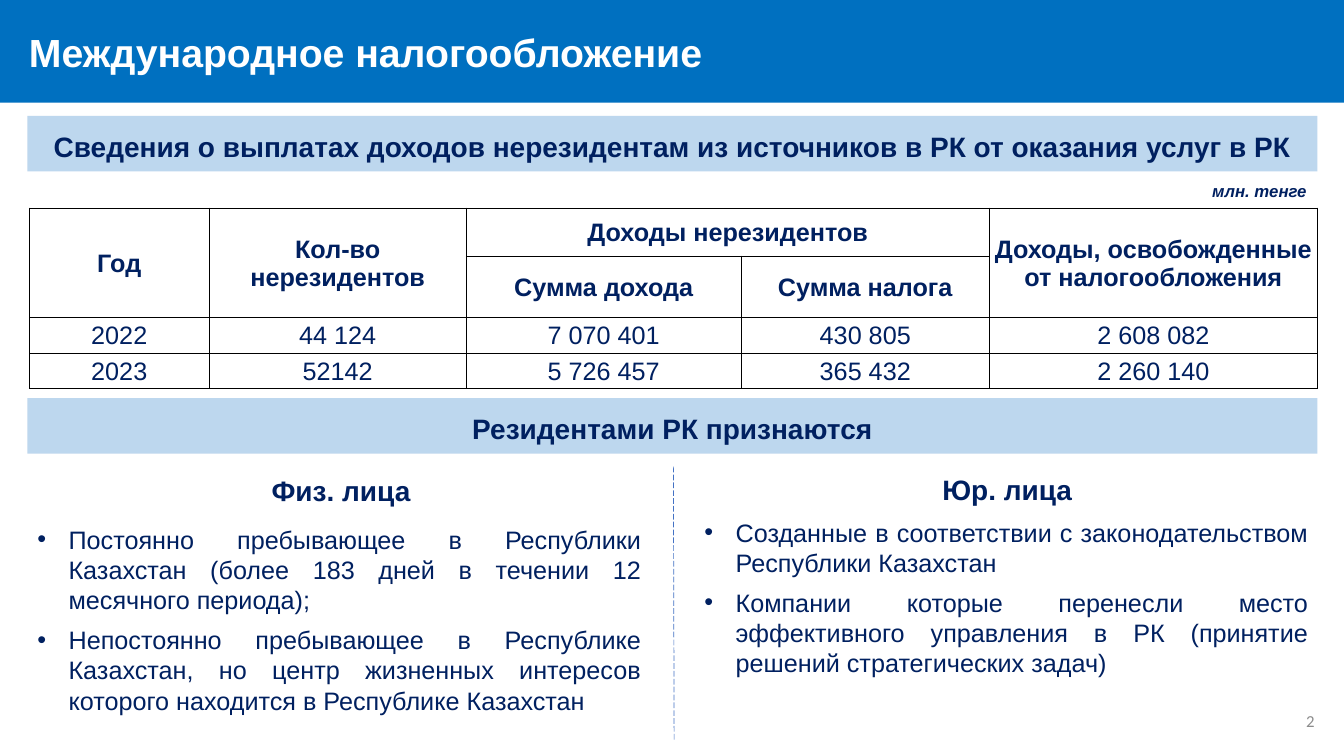
import pptx
import pptx.dml.color
import pptx.enum.dml
import pptx.enum.shapes
import pptx.enum.text
import pptx.oxml
import pptx.oxml.ns
import pptx.util

Cm = pptx.util.Cm
Pt = pptx.util.Pt
RGBColor = pptx.dml.color.RGBColor
Align = pptx.enum.text.PP_ALIGN
Anchor = pptx.enum.text.MSO_ANCHOR

WHITE = RGBColor(0xFF, 0xFF, 0xFF)
NAVY = RGBColor(0x00, 0x20, 0x60)
BLUE = RGBColor(0x00, 0x70, 0xC0)
PALE_BLUE = RGBColor(0xBD, 0xD7, 0xEE)
DIVIDER_BLUE = RGBColor(0x44, 0x72, 0xC4)
GREY = RGBColor(0x8C, 0x8C, 0x8C)

TITLE = "Международное налогообложение"
UNIT = "млн. тенге"
PAGE_NUMBER = "2"
BANDS = [
    ("Сведения о выплатах доходов нерезидентам из источников в РК от оказания услуг в РК", 2.92),
    ("Резидентами РК признаются", 10.03),
]
TABLE_ROWS = [
    ["Год", "Кол-во нерезидентов", "Доходы нерезидентов", "", "Доходы, освобожденные от налогообложения"],
    ["", "", "Сумма дохода", "Сумма налога", ""],
    ["2022", "44 124", "7 070 401", "430 805", "2 608 082"],
    ["2023", "52142", "5 726 457", "365 432", "2 260 140"],
]
HEADER_ROWS = 2
MERGES = [((0, 0), (1, 0)), ((0, 1), (1, 1)), ((0, 2), (0, 3)), ((0, 4), (1, 4))]
COLUMN_WIDTHS = [4.53, 6.48, 6.93, 6.25, 8.27]
ROW_HEIGHTS = [1.21, 1.54, 0.89, 0.9]
RESIDENTS = [
    {
        "heading": "Физ. лица",
        "heading_at": (0.76, 11.68, 15.67, 1.2),
        "points_at": (0.69, 13.08, 15.72, 5.13),
        "points": [
            "Постоянно пребывающее в Республики Казахстан (более 183 дней в течении 12 месячного периода);",
            "Непостоянно пребывающее в Республике Казахстан, но центр жизненных интересов которого находится в Республике Казахстан",
        ],
    },
    {
        "heading": "Юр. лица",
        "heading_at": (17.55, 11.66, 15.67, 1.2),
        "points_at": (17.5, 12.9, 15.72, 4.62),
        "points": [
            "Созданные в соответствии с законодательством Республики Казахстан",
            "Компании которые перенесли место эффективного управления в РК (принятие решений стратегических задач)",
        ],
    },
]


def add_child(parent, xml):
    tag, rest = xml.split(" ", 1)
    child = pptx.oxml.parse_xml(f"<a:{tag} {pptx.oxml.ns.nsdecls('a')} {rest}")
    parent.append(child)


def write(para, text, size, color=NAVY, bold=False, italic=False, font="Arial", align=Align.LEFT):
    para.alignment = align
    span = para.add_run()
    span.text = text
    span.font.name = font
    span.font.size = Pt(size)
    span.font.bold = bold
    span.font.italic = italic
    span.font.color.rgb = color


def add_bar(page, at, color):
    bar = page.shapes.add_shape(pptx.enum.shapes.MSO_SHAPE.RECTANGLE, *map(Cm, at))
    bar.shadow.inherit = False
    bar.fill.solid()
    bar.fill.fore_color.rgb = color
    bar.line.fill.background()
    bar.text_frame.word_wrap = True
    bar.text_frame.vertical_anchor = Anchor.MIDDLE
    return bar.text_frame.paragraphs[0]


def add_text(page, at, wrap=True, anchor=Anchor.TOP):
    frame = page.shapes.add_textbox(*map(Cm, at)).text_frame
    frame.word_wrap = wrap
    frame.vertical_anchor = anchor
    return frame


def add_heading(para, text):
    para.line_spacing = 1.14
    write(para, text, 20, bold=True, align=Align.CENTER)


def add_points(frame, points):
    for number, text in enumerate(points):
        para = frame.add_paragraph() if number else frame.paragraphs[0]
        properties = para._p.get_or_add_pPr()
        properties.set("marL", str(Cm(0.79)))
        properties.set("indent", str(-Cm(0.79)))
        add_child(properties, 'buFont typeface="Arial"/>')
        add_child(properties, 'buChar char="•"/>')
        if number:
            para.space_before = Pt(7)
        write(para, text, 18, align=Align.JUSTIFY)


def add_income_table(page):
    table = page.shapes.add_table(
        len(ROW_HEIGHTS), len(COLUMN_WIDTHS), Cm(0.74), Cm(5.24),
        Cm(sum(COLUMN_WIDTHS)), Cm(sum(ROW_HEIGHTS))).table
    table.first_row = False
    table.horz_banding = False
    for column, width in zip(table.columns, COLUMN_WIDTHS):
        column.width = Cm(width)
    for row, height in zip(table.rows, ROW_HEIGHTS):
        row.height = Cm(height)
    for row_number, texts in enumerate(TABLE_ROWS):
        for column_number, text in enumerate(texts):
            cell = table.cell(row_number, column_number)
            cell.margin_left = cell.margin_right = cell.margin_top = Cm(0.03)
            cell.margin_bottom = 0
            cell.vertical_anchor = Anchor.MIDDLE
            properties = cell._tc.get_or_add_tcPr()
            for side in "LRTB":
                add_child(properties, f'ln{side} w="{Pt(0.5)}"><a:solidFill>'
                          f'<a:srgbClr val="000000"/></a:solidFill></a:ln{side}>')
            cell.fill.background()
            if text:
                write(cell.text_frame.paragraphs[0], text, 18,
                      bold=row_number < HEADER_ROWS, align=Align.CENTER)
    for first, last in MERGES:
        table.cell(*first).merge(table.cell(*last))


def add_divider(page):
    divider = page.shapes.add_connector(
        pptx.enum.shapes.MSO_CONNECTOR.STRAIGHT, Cm(16.97), Cm(11.76), Cm(16.99), Cm(18.67))
    divider.line.color.rgb = DIVIDER_BLUE
    divider.line.width = Pt(0.5)
    divider.line.dash_style = pptx.enum.dml.MSO_LINE.LONG_DASH
    add_child(divider._element.spPr, "effectLst />")


def main():
    deck = pptx.Presentation()
    deck.slide_width = Cm(33.87)
    deck.slide_height = Cm(19.05)
    page = deck.slides.add_slide(deck.slide_layouts[6])

    title = add_bar(page, (0, 0, 33.87, 2.59), BLUE)
    title._p.get_or_add_pPr().set("marL", str(Cm(0.48)))
    write(title, TITLE, 28, WHITE, bold=True)

    unit = add_text(page, (30.3, 4.42, 2.92, 0.76), wrap=False)
    write(unit.paragraphs[0], UNIT, 12, bold=True, italic=True)

    for text, top in BANDS:
        add_heading(add_bar(page, (0.69, top, 32.51, 1.4), PALE_BLUE), text)

    add_income_table(page)
    add_divider(page)
    for group in RESIDENTS:
        add_heading(add_text(page, group["heading_at"]).paragraphs[0], group["heading"])
        add_points(add_text(page, group["points_at"]), group["points"])

    number = add_text(page, (25.76, 17.65, 7.62, 1.02), anchor=Anchor.MIDDLE)
    write(number.paragraphs[0], PAGE_NUMBER, 12, GREY, font="Calibri", align=Align.RIGHT)
    deck.save("out.pptx")


if __name__ == "__main__":
    main()
